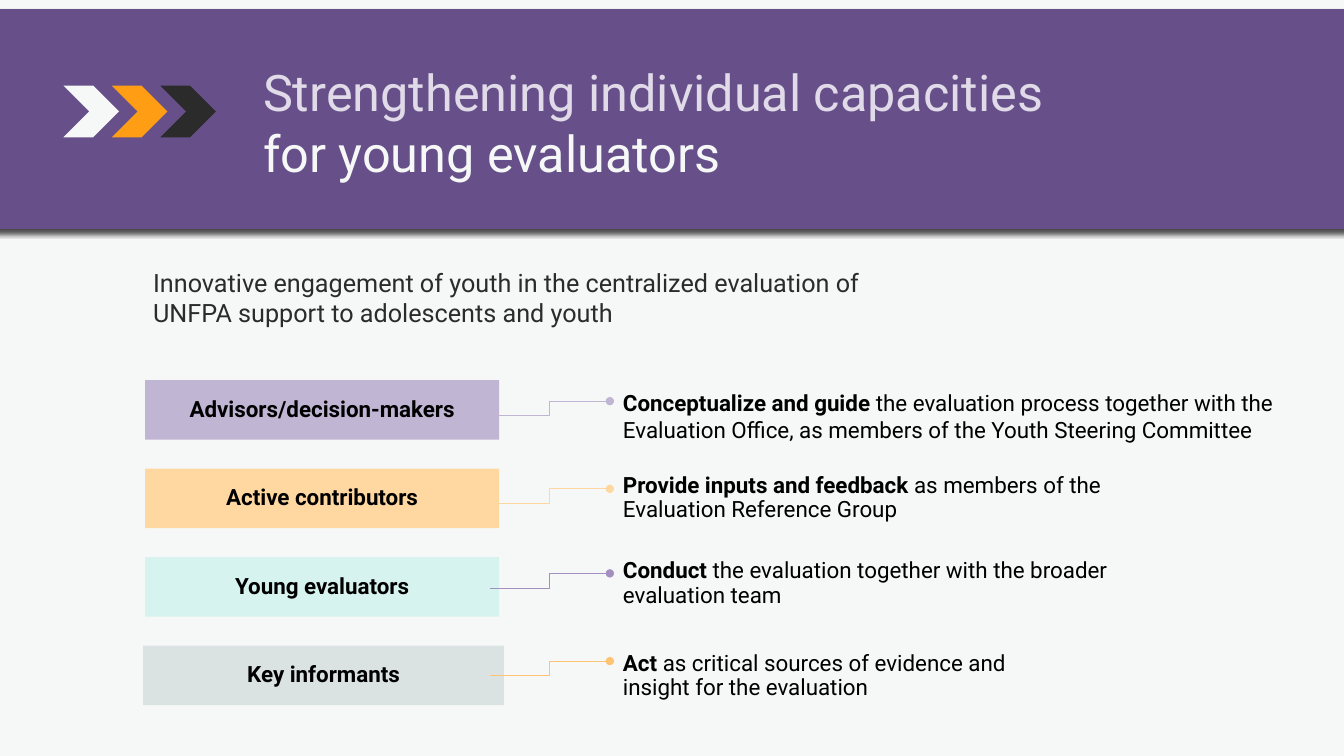
from lxml.etree import SubElement
from pptx import Presentation
from pptx.dml.color import RGBColor
from pptx.enum.shapes import MSO_CONNECTOR, MSO_SHAPE
from pptx.enum.text import MSO_ANCHOR, PP_ALIGN
from pptx.oxml.ns import qn
from pptx.util import Cm, Pt

# Content
TITLE = [("Strengthening individual capacities ", "E0DAE9"),
         ("for young evaluators", "F6F8F8")]
INTRO = ("Innovative engagement of youth in the centralized evaluation of "
         "UNFPA support to adolescents and youth")
ARROWS = ["F6F8F8", "FF9D15", "2B2B2B"]
# role, fill, line colour, line end y, bold text, plain text, text centre y, text width
ROLES = [
    ("Advisors/decision-makers", "C1B5D4", "C1B5D4", 10.11,
     "Conceptualize and guide ",
     "the evaluation process together with the Evaluation Office, "
     "as members of the Youth Steering Committee", 10.49, 17.5),
    ("Active contributors", "FFD8A1", "FFD8A1", 12.32,
     "Provide inputs and feedback ",
     "as members of the Evaluation Reference Group", 12.55, 14.5),
    ("Young evaluators", "D7F3F0", "A390BE", 14.45,
     "Conduct",
     " the evaluation together with the broader evaluation team", 14.71, 13.77),
    ("Key informants", "DAE2E2", "FFC473", 16.66,
     "Act ",
     "as critical sources of evidence and insight for the evaluation", 17.04, 11.79),
]

# Layout, in cm
BOX_X, BOX_Y, BOX_W, BOX_H, PITCH = 3.66, 9.58, 8.92, 1.5, 2.23
LAST_X, LAST_W = 3.61, 9.09
LINE_X, TEXT_X, RISE, TEXT_H = 12.34, 15.37, 0.37, 2.18
PAD = 0.33


def rgb(code):
    return RGBColor.from_string(code)


def add_block(shapes, kind, x, y, w, h, fill):
    block = shapes.add_shape(kind, Cm(x), Cm(y), Cm(w), Cm(h))
    block.shadow.inherit = False
    block.fill.solid()
    block.fill.fore_color.rgb = rgb(fill)
    block.line.fill.background()
    return block


def add_box(x, y, w, h):
    return slide.shapes.add_textbox(Cm(x), Cm(y), Cm(w), Cm(h))


def write(shape, runs, size, color, anchor=MSO_ANCHOR.MIDDLE, pad=None):
    frame = shape.text_frame
    frame.word_wrap = True
    frame.vertical_anchor = anchor
    if pad:
        frame.margin_left = frame.margin_right = Cm(pad)
        frame.margin_top = frame.margin_bottom = Cm(pad)
    para = frame.paragraphs[0]
    para.font.name, para.font.size = "Roboto", Pt(size)
    para.font.color.rgb = rgb(color)
    for text in runs:
        para.add_run().text = text
    return para


def add_link(x1, y1, x2, y2, color):
    link = slide.shapes.add_connector(
        MSO_CONNECTOR.ELBOW, Cm(x1), Cm(y1), Cm(x2), Cm(y2))
    link.line.color.rgb = rgb(color)
    link.line.width = Pt(0.75)
    SubElement(link.line._get_or_add_ln(), qn("a:tailEnd"), type="oval")
    SubElement(link._element.spPr, qn("a:effectLst"))


def add_shadow(shape):
    effects = shape._element.spPr.find(qn("a:effectLst"))
    outer = SubElement(effects, qn("a:outerShdw"), blurRad=str(Pt(4)),
                       dist=str(Pt(3)), dir=str(69 * 60000), rotWithShape="0")
    black = SubElement(outer, qn("a:srgbClr"), val="000000")
    SubElement(black, qn("a:alpha"), val="69000")


deck = Presentation()
deck.slide_width, deck.slide_height = Cm(33.87), Cm(19.05)
slide = deck.slides.add_slide(deck.slide_layouts[6])
slide.background.fill.solid()
slide.background.fill.fore_color.rgb = rgb("F6F8F8")

# Role boxes, texts and links
for i, (role, fill, color, end, bold, plain, mid, width) in enumerate(ROLES):
    last = i == len(ROLES) - 1
    box = add_block(slide.shapes, MSO_SHAPE.RECTANGLE, LAST_X if last else BOX_X,
                    BOX_Y + i * PITCH, LAST_W if last else BOX_W, BOX_H, fill)
    label = write(box, [role], 16, "000000", pad=PAD)
    label.alignment = PP_ALIGN.CENTER
    label.font.bold = True
    label.line_spacing = 0.9

    note = write(add_box(TEXT_X, mid - TEXT_H / 2, width, TEXT_H),
                 [bold, plain], 16, "000000", pad=PAD)
    note.runs[0].font.bold = True
    if i > 0:
        note.line_spacing = 0.9
    add_link(LINE_X, end + RISE, TEXT_X, end, color)

# Intro
write(add_box(3.61, 6.4, 19.96, 2.18), [INTRO], 18, "2B2B2B")

# Banner and title
banner = add_block(slide.shapes, MSO_SHAPE.RECTANGLE, -0.41, 0.23, 34.67, 5.54, "675089")
add_shadow(banner)
title = write(add_box(6.38, 1.42, 21.16, 3.33), [text for text, _ in TITLE],
              36, "F6F8F8", MSO_ANCHOR.TOP)
for run, (_, color) in zip(title.runs, TITLE):
    run.font.color.rgb = rgb(color)

# Chevrons, the leftmost in front
group = slide.shapes.add_group_shape()
for i, color in reversed(list(enumerate(ARROWS))):
    add_block(group.shapes, MSO_SHAPE.CHEVRON, 1.6 + i * 1.22, 2.16, 1.4, 1.3, color)

deck.save("out.pptx")
